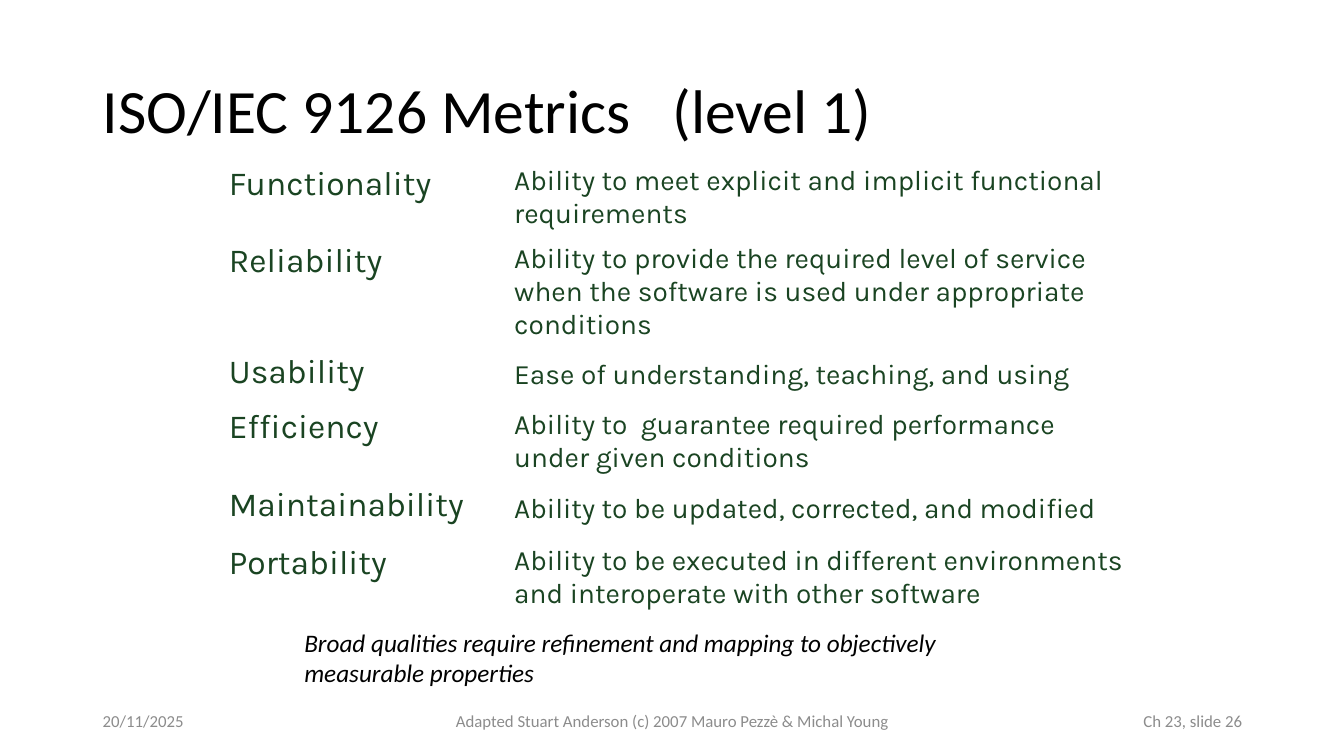
import pptx
import pptx.util
import pptx.dml.color
import pptx.enum.text

Inches = pptx.util.Inches
ANCHOR = pptx.enum.text.MSO_ANCHOR
ALIGN = pptx.enum.text.PP_ALIGN
BLACK = pptx.dml.color.RGBColor(0x00, 0x00, 0x00)
GREY = pptx.dml.color.RGBColor(0x8C, 0x8C, 0x8C)
GREEN = pptx.dml.color.RGBColor(0x1A, 0x44, 0x22)


def write(frame, text, size, color=BLACK, font="Calibri", italic=False,
          align=ALIGN.LEFT, anchor=ANCHOR.MIDDLE, spacing=1.0):
    frame.word_wrap = True
    frame.vertical_anchor = anchor
    paragraph = frame.paragraphs[0]
    paragraph.alignment = align
    paragraph.line_spacing = spacing
    run = paragraph.add_run()
    run.text = text
    run.font.size = pptx.util.Pt(size)
    run.font.name = font
    run.font.color.rgb = color
    run.font.bold = False
    run.font.italic = italic


deck = pptx.Presentation()
deck.slide_width = Inches(13.33)
deck.slide_height = Inches(7.5)
slide = deck.slides.add_slide(deck.slide_layouts[6])

title = slide.shapes.add_textbox(Inches(0.92), Inches(0.4), Inches(11.5), Inches(1.45))
write(title.text_frame, "ISO/IEC 9126 Metrics   (level 1)", 44, spacing=0.9)

qualities = [
    ("Functionality", "Ability to meet explicit and implicit functional requirements", 0.75),
    ("Reliability", "Ability to provide the required level of service when the software "
     "is used under appropriate conditions", 0.98),
    ("Usability", "Ease of understanding, teaching, and using", 0.55),
    ("Efficiency", "Ability to  guarantee required performance under given conditions", 0.48),
    ("Maintainability", "Ability to be updated, corrected, and modified", 0.58),
    ("Portability", "Ability to be executed in different environments and interoperate "
     "with other software", 0.61),
]
metrics = slide.shapes.add_table(
    len(qualities), 2, Inches(2.17), Inches(1.58), Inches(9.17), Inches(4.53)).table
metrics.first_row = False
metrics.horz_banding = False
metrics.columns[0].width = Inches(2.83)
metrics.columns[1].width = Inches(6.33)
for row, (quality, meaning, height) in enumerate(qualities):
    metrics.rows[row].height = Inches(height)
    for column, (text, size, anchor) in enumerate(
            [(quality, 24, ANCHOR.TOP), (meaning, 20, ANCHOR.MIDDLE)]):
        cell = metrics.cell(row, column)
        cell.fill.background()
        write(cell.text_frame, text, size, color=GREEN, font="Karla")
        cell.vertical_anchor = anchor

remark = slide.shapes.add_textbox(Inches(2.92), Inches(6.17), Inches(7.56), Inches(0.71))
write(remark.text_frame,
      "Broad qualities require refinement and mapping to objectively measurable properties",
      18, italic=True, anchor=ANCHOR.TOP)

for text, left, width, align in [
    ("20/11/2025", 0.92, 3, ALIGN.LEFT),
    ("Adapted Stuart Anderson (c) 2007 Mauro Pezzè & Michal Young", 4.42, 4.5, ALIGN.CENTER),
    ("Ch 23, slide 26", 9.42, 3, ALIGN.RIGHT),
]:
    footer = slide.shapes.add_textbox(Inches(left), Inches(6.95), Inches(width), Inches(0.4))
    write(footer.text_frame, text, 12, color=GREY, align=align)

deck.save("out.pptx")
